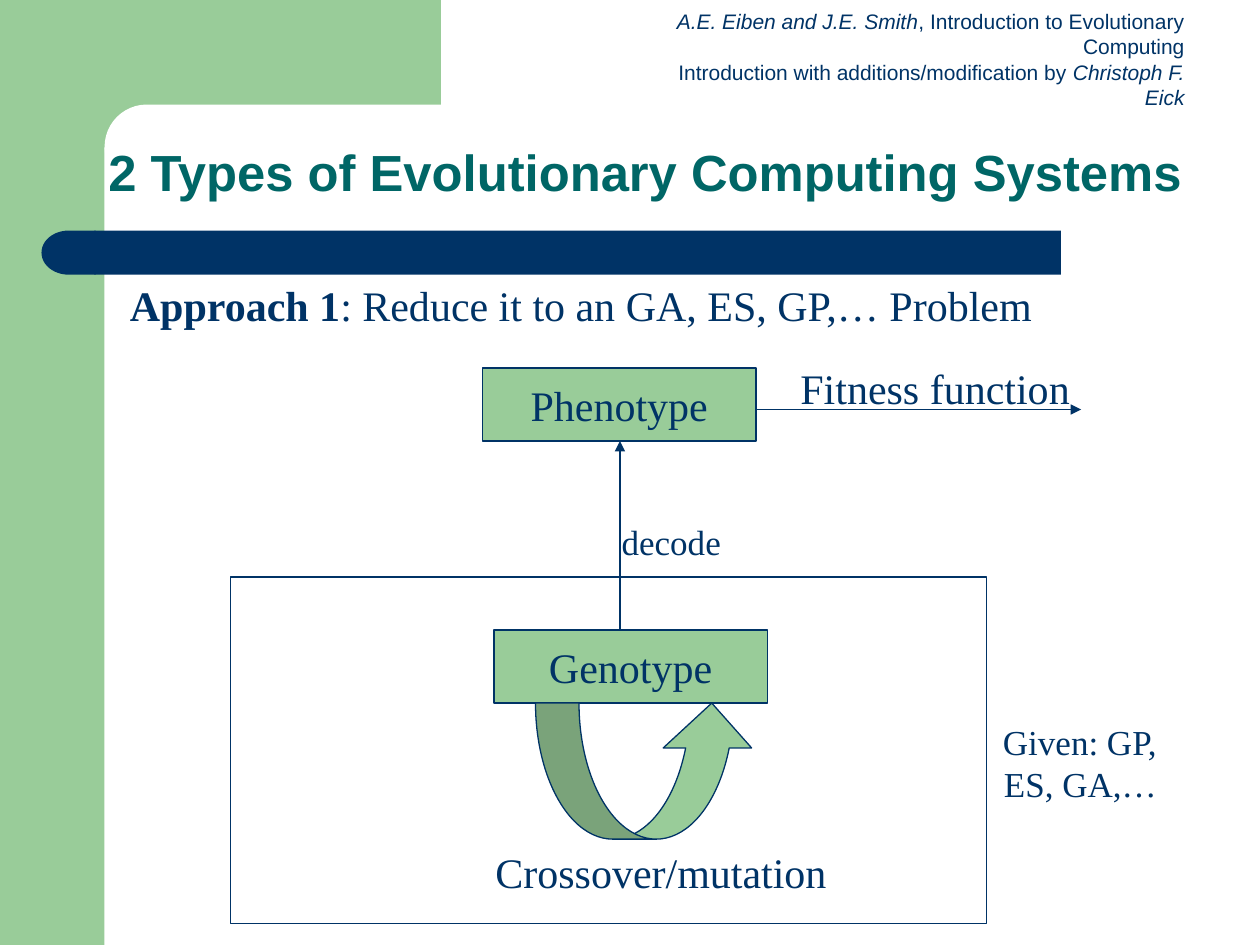
from dataclasses import dataclass

import pptx
import pptx.dml.color
import pptx.enum.shapes
import pptx.enum.text
import pptx.oxml.ns
import pptx.util
from lxml import etree

Inches = pptx.util.Inches
Pt = pptx.util.Pt
MSO = pptx.enum.shapes.MSO_SHAPE
ALIGN = pptx.enum.text.PP_ALIGN
ANCHOR = pptx.enum.text.MSO_ANCHOR
AUTO = pptx.enum.text.MSO_AUTO_SIZE
qn = pptx.oxml.ns.qn

NAVY, GREEN, TEAL, WHITE = "003366", "99CC99", "006666", "FFFFFF"
SERIF, SANS = "Times New Roman", "Arial"


@dataclass
class Block:
    at: tuple[float, float, float, float]
    kind: MSO = MSO.RECTANGLE
    fill: str | None = GREEN
    line: str | None = None
    adj: tuple[float, ...] = ()
    flip: bool = False
    text: str = ""


@dataclass
class Run:
    text: str
    bold: bool | None = None
    italic: bool | None = None


@dataclass
class Label:
    at: tuple[float, float, float, float]
    lines: list[list[Run]]
    size: float = 24
    font: str = SERIF
    wrap: bool = False


@dataclass
class Arrow:
    start: tuple[float, float]
    end: tuple[float, float]


def rgb(color: str) -> pptx.dml.color.RGBColor:
    return pptx.dml.color.RGBColor.from_string(color)


def style(p, size: float, font: str, color: str, align: ALIGN) -> None:
    p.alignment = align
    p.font.size = Pt(size)
    p.font.name = font
    p.font.color.rgb = rgb(color)


def draw_block(s, b: Block) -> None:
    sp = s.shapes.add_shape(b.kind, *map(Inches, b.at))
    sp.shadow.inherit = False
    for i, value in enumerate(b.adj):
        sp.adjustments[i] = value
    if b.fill:
        sp.fill.solid()
        sp.fill.fore_color.rgb = rgb(b.fill)
    else:
        sp.fill.background()
    if b.line:
        sp.line.color.rgb = rgb(b.line)
        sp.line.width = Pt(0.75)
    else:
        sp.line.fill.background()
    if b.flip:
        sp._element.spPr.find(qn("a:xfrm")).set("flipH", "1")
    if b.text:
        tf = sp.text_frame
        tf.word_wrap = False
        tf.vertical_anchor = ANCHOR.MIDDLE
        p = tf.paragraphs[0]
        p.text = b.text
        style(p, 24, SERIF, NAVY, ALIGN.CENTER)


def draw_label(s, label: Label) -> None:
    tf = s.shapes.add_textbox(*map(Inches, label.at)).text_frame
    tf.word_wrap = label.wrap
    tf.auto_size = AUTO.SHAPE_TO_FIT_TEXT
    for i, runs in enumerate(label.lines):
        p = tf.add_paragraph() if i else tf.paragraphs[0]
        style(p, label.size, label.font, NAVY, ALIGN.RIGHT)
        for run in runs:
            r = p.add_run()
            r.text = run.text
            r.font.bold = run.bold
            r.font.italic = run.italic


def draw_arrow(s, a: Arrow) -> None:
    c = s.shapes.add_connector(
        pptx.enum.shapes.MSO_CONNECTOR.STRAIGHT, *map(Inches, a.start + a.end)
    )
    c.line.color.rgb = rgb(NAVY)
    c.line.width = Pt(0.75)
    etree.SubElement(c.line._get_or_add_ln(), qn("a:tailEnd"), type="triangle")
    etree.SubElement(c._element.spPr, qn("a:effectLst"))


def draw_title(s, text: str) -> None:
    sp = s.shapes.title
    s.shapes._spTree.append(sp._element)
    sp.left, sp.top, sp.width, sp.height = map(Inches, (0.25, 1.08, 9.75, 0.58))
    tf = sp.text_frame
    tf.word_wrap = True
    tf.auto_size = AUTO.NONE
    tf.vertical_anchor = ANCHOR.BOTTOM
    p = tf.paragraphs[0]
    p.text = text
    p.line_spacing = 0.9
    p.font.bold = True
    style(p, 29, SANS, TEAL, ALIGN.CENTER)


BACKDROP = [
    Block((0, 0, 0.83, 7.5)),
    Block((0.75, 0, 2.75, 1.17)),
    Block((0.83, 0.83, 5.58, 0.67), MSO.ROUNDED_RECTANGLE, WHITE, adj=(0.5,)),
    Block((0.75, 1.83, 7.67, 0.35), fill=NAVY),
    Block((0.33, 1.83, 0.43, 0.35), MSO.FLOWCHART_DELAY, NAVY, flip=True),
]

HEADER = Label(
    (4.93, 0.02, 4.57, 0.7),
    [
        [
            Run("A.E. Eiben and J.E. Smith", italic=True),
            Run(", Introduction to Evolutionary Computing"),
        ],
        [
            Run("Introduction with additions/modification by "),
            Run("Christoph F. Eick", italic=True),
        ],
    ],
    12,
    SANS,
    True,
)

DIAGRAM = [
    Label(
        (0.89, 2.17, 7.4, 0.5),
        [[Run("Approach 1", bold=True), Run(": Reduce it to an GA, ES, GP,… Problem")]],
    ),
    Block((3.83, 2.92, 2.17, 0.58), line=NAVY, text="Phenotype"),
    Arrow((6, 3.25), (8.58, 3.25)),
    Label((6.25, 2.83, 2.34, 0.5), [[Run("Fitness function")]]),
    Block((3.92, 5, 2.17, 0.58), line=NAVY, text="Genotype"),
    Arrow((4.92, 5), (4.92, 3.5)),
    Label((4.83, 4.08, 0.99, 0.43), [[Run("decode")]], 20),
    Block(
        (4.25, 5.58, 1.75, 1.08), MSO.CURVED_UP_ARROW, line=NAVY, adj=(0.32, 0.65, 0.33)
    ),
    Label((3.83, 6.67, 2.83, 0.5), [[Run("Crossover/mutation")]]),
    Block((1.83, 4.58, 6, 2.75), fill=None, line=NAVY),
    Label((7.83, 5.67, 1.45, 0.77), [[Run("Given: GP,")], [Run("ES, GA,…")]], 20),
]

DRAW = {Block: draw_block, Label: draw_label, Arrow: draw_arrow}


def main() -> None:
    prs = pptx.Presentation()
    prs.slide_width, prs.slide_height = Inches(10), Inches(7.5)
    s = prs.slides.add_slide(prs.slide_layouts[5])
    for item in BACKDROP + [HEADER]:
        DRAW[type(item)](s, item)
    draw_title(s, "2 Types of Evolutionary Computing Systems")
    for item in DIAGRAM:
        DRAW[type(item)](s, item)
    prs.save("out.pptx")


if __name__ == "__main__":
    main()
